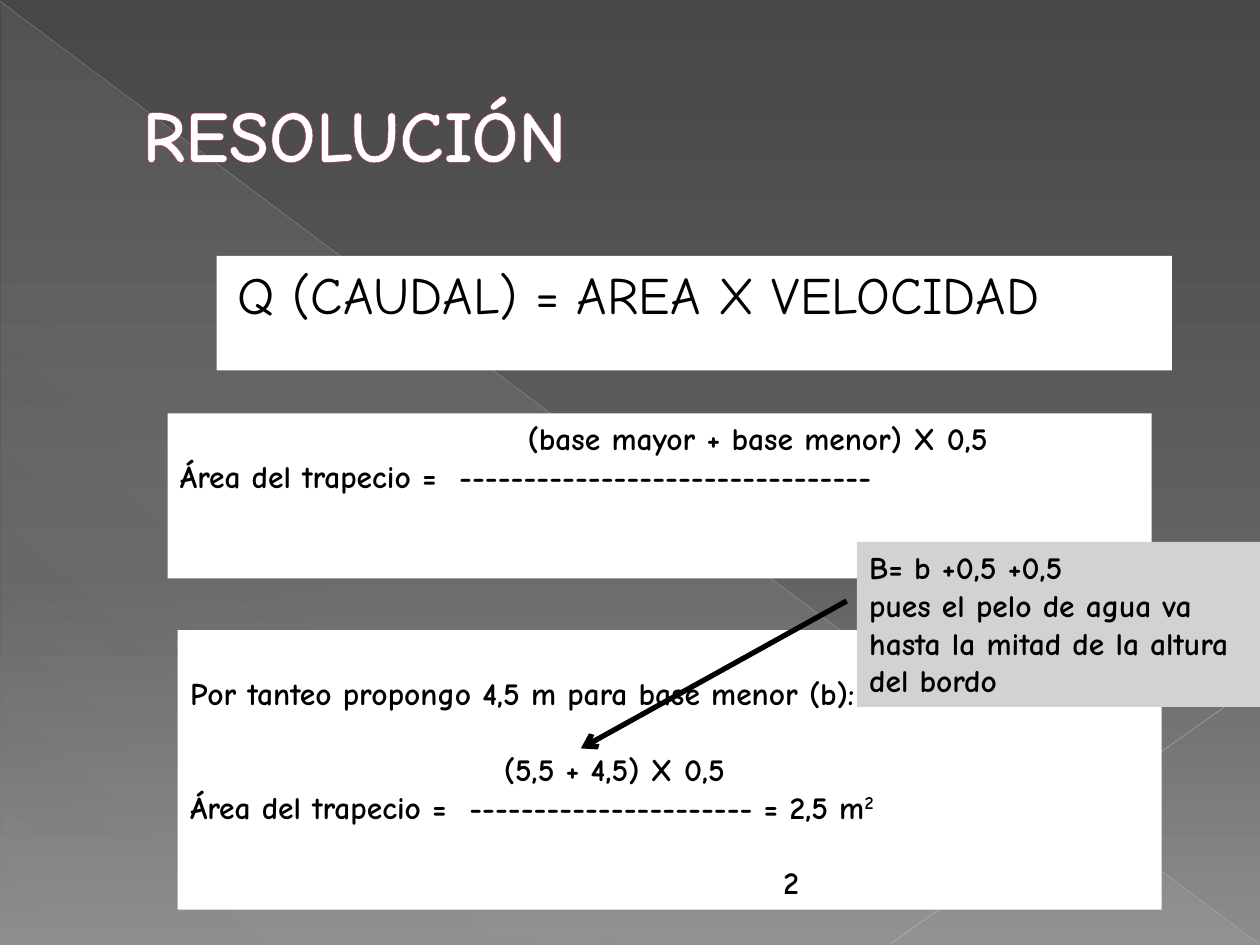
import pptx
import pptx.util
import pptx.dml.color
import pptx.enum.shapes
import pptx.enum.text
import pptx.oxml.ns
from lxml import etree

Inches, Pt = pptx.util.Inches, pptx.util.Pt
qn = pptx.oxml.ns.qn
FONT = "Comic Neue"
LINE_STEP = 0.3

# Gradient stops: position %, colour, opacity %
BACKGROUND = [(0, "474747", 100), (60, "626262", 100), (100, "8C8C8C", 100)]
TRIANGLE = [(0, "D2D2D2", 10), (70, "D2D2D2", 8), (100, "D2D2D2", 1)]

# Diagonals: from, to, colour, width in points, opacity %
DIAGONALS = [
    ((0, 0.01), (9.99, 7.49), "BFBFBF", 0.39, 35),
    ((10, 5.41), (7.07, 7.49), "C6C6C6", 0.47, 45),
]

# Boxes: place, fill, size, bold, paragraphs (text, superscript, indent, blank lines above)
BOXES = [
    ((1.72, 2.03, 7.58, 0.91), "FFFFFF", 30, False,
     [("Q (CAUDAL) = AREA X VELOCIDAD", "", 0.07, 0)]),
    ((1.33, 3.28, 7.81, 1.31), "FFFFFF", 18, True,
     [("(base mayor + base menor) X 0,5", "", 2.76, 0),
      ("Área del trapecio =  " + "-" * 32, "", 0, 0)]),
    ((1.41, 5, 7.81, 2.22), "FFFFFF", 18, True,
     [("Por tanteo propongo 4,5 m para base menor (b):", "", 0, 1),
      ("(5,5 + 4,5) X 0,5", "", 2.49, 1),
      ("Área del trapecio =  " + "-" * 22 + " = 2,5 m", "2", 0, 0),
      ("2", "", 4.71, 1)]),
    ((6.8, 4.3, 3.2, 1.31), "D2D2D2", 18, True,
     [("B= b +0,5 +0,5", "", 0, 0),
      ("pues el pelo de agua va hasta la mitad de la altura del bordo", "", 0, 0)]),
]


def rgb(value):
    return pptx.dml.color.RGBColor.from_string(value)


def set_alpha(clr, opacity):
    etree.SubElement(clr, qn("a:alpha")).set("val", str(opacity * 1000))


def set_gradient(fill, stops, angle):
    """Fill with the stops; angle runs clockwise in degrees."""
    fill.gradient()
    fill.gradient_angle = 360 - angle
    stop_list = fill._xPr.find(qn("a:gradFill")).find(qn("a:gsLst"))
    for old in list(stop_list):
        stop_list.remove(old)
    for position, color, opacity in stops:
        gs = etree.SubElement(stop_list, qn("a:gs"))
        gs.set("pos", str(position * 1000))
        clr = etree.SubElement(gs, qn("a:srgbClr"))
        clr.set("val", color)
        if opacity < 100:
            set_alpha(clr, opacity)


def set_font(r, size, color, bold):
    r.font.name, r.font.size, r.font.bold = FONT, Pt(size), bold
    r.font.color.rgb = rgb(color)


def add_line(s, start, end, color, width):
    line = s.shapes.add_connector(pptx.enum.shapes.MSO_CONNECTOR.STRAIGHT,
                                  *map(Inches, start + end))
    line.line.color.rgb = rgb(color)
    line.line.width = Pt(width)
    etree.SubElement(line._element.spPr, qn("a:effectLst"))
    return line


def add_box(s, place, fill, size, bold, paragraphs):
    sp = s.shapes.add_textbox(*map(Inches, place))
    sp.fill.solid()
    sp.fill.fore_color.rgb = rgb(fill)
    tf = sp.text_frame
    tf.word_wrap = True
    for i, (text, superscript, indent, blank) in enumerate(paragraphs):
        p = tf.paragraphs[0] if i == 0 else tf.add_paragraph()
        p.text = text
        if superscript:
            r = p.add_run()
            r.text = superscript
            r._r.get_or_add_rPr().set("baseline", "30000")
        for r in p.runs:
            set_font(r, size, "000000", bold)
        p._p.get_or_add_pPr().set("marL", str(Inches(indent)))
        if i == 0:
            tf.margin_top = Inches(0.05 + blank * LINE_STEP)
        else:
            p.space_before = Inches(blank * LINE_STEP)


def add_title(s, text):
    sp = s.shapes.title
    sp.left, sp.top, sp.width, sp.height = map(Inches, (0.5, 0.29, 9, 1.53))
    tf = sp.text_frame
    tf.text = text
    tf.vertical_anchor = pptx.enum.text.MSO_ANCHOR.MIDDLE
    p = tf.paragraphs[0]
    p.alignment = pptx.enum.text.PP_ALIGN.LEFT
    p._p.get_or_add_pPr().set("marL", str(Inches(0.53)))
    r = p.runs[0]
    set_font(r, 42, "FFFFFF", True)
    outline = etree.Element(qn("a:ln"), w=str(Pt(0.5)))
    solid = etree.SubElement(outline, qn("a:solidFill"))
    etree.SubElement(solid, qn("a:srgbClr")).set("val", "B12761")
    r._r.get_or_add_rPr().insert(0, outline)
    s.shapes._spTree.append(sp._element)  # above the backdrop


def main():
    prs = pptx.Presentation()
    prs.slide_width, prs.slide_height = Inches(10), Inches(7.5)
    s = prs.slides.add_slide(prs.slide_layouts[5])
    set_gradient(s.background.fill, BACKGROUND, 90)

    triangle = s.shapes.add_shape(pptx.enum.shapes.MSO_SHAPE.RIGHT_TRIANGLE,
                                  *map(Inches, (0.01, 0.02, 9.99, 7.48)))
    triangle.shadow.inherit = False
    triangle.line.fill.background()
    set_gradient(triangle.fill, TRIANGLE, 133)
    for start, end, color, width, opacity in DIAGONALS:
        line = add_line(s, start, end, color, width)
        set_alpha(next(line._element.spPr.iter(qn("a:srgbClr"))), opacity)

    add_title(s, "RESOLUCIÓN")
    for box in BOXES:
        add_box(s, *box)

    arrow = add_line(s, (6.72, 4.77), (4.61, 5.94), "000000", 3)
    ln = arrow._element.spPr.find(qn("a:ln"))
    etree.SubElement(ln, qn("a:tailEnd")).set("type", "arrow")

    prs.save("out.pptx")


if __name__ == "__main__":
    main()
